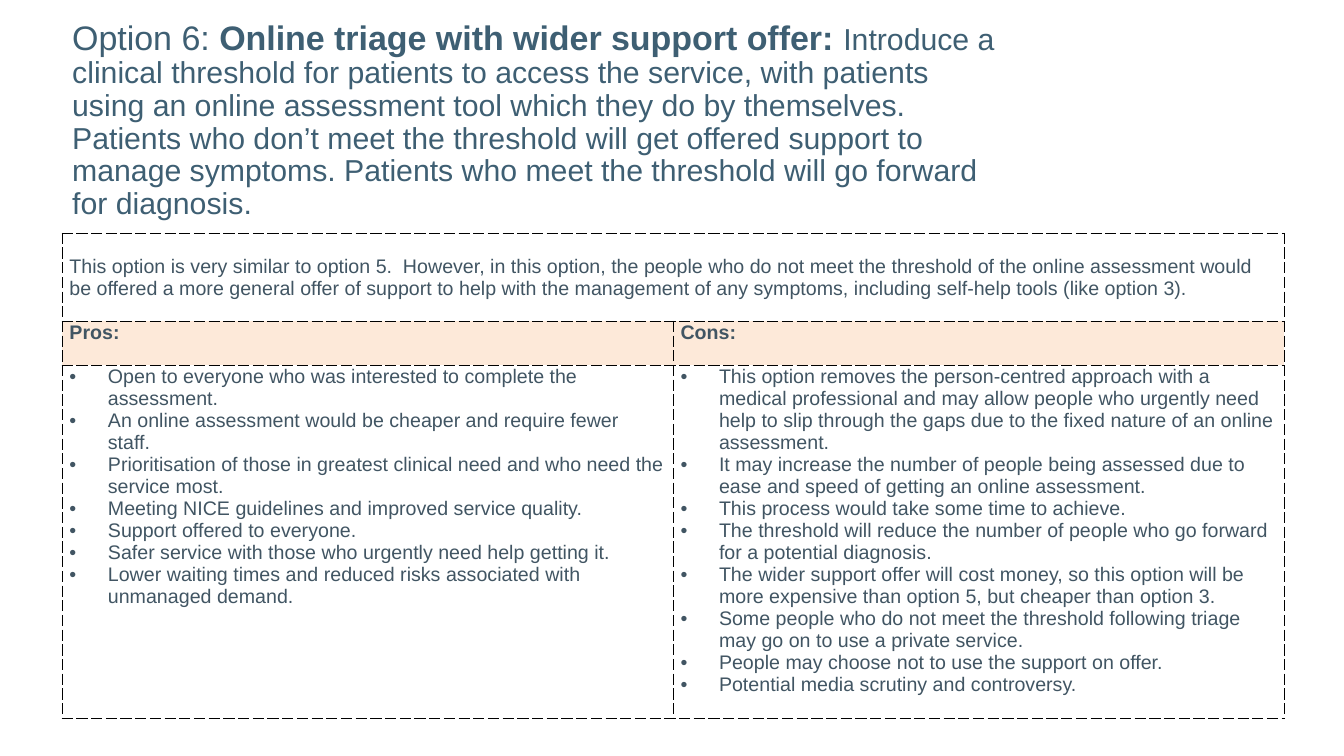
from lxml import etree
from pptx import Presentation
from pptx.dml.color import RGBColor
from pptx.enum import text
from pptx.oxml import ns
from pptx.util import Cm, Pt

TITLE_BLUE = RGBColor(0x3E, 0x5F, 0x73)
BODY_GREY = RGBColor(0x41, 0x55, 0x63)
PEACH = RGBColor(0xFD, 0xE9, 0xD9)
WHITE = RGBColor(0xFF, 0xFF, 0xFF)
BORDER = RGBColor(0, 0, 0)

INTRO = (
    "This option is very similar to option 5.  However, in this option, the people "
    "who do not meet the threshold of the online assessment would be offered a more "
    "general offer of support to help with the management of any symptoms, including "
    "self-help tools (like option 3)."
)
PROS = [
    "Open to everyone who was interested to complete the assessment.",
    "An online assessment would be cheaper and require fewer staff.",
    "Prioritisation of those in greatest clinical need and who need the service most.",
    "Meeting NICE guidelines and improved service quality.",
    "Support offered to everyone.",
    "Safer service with those who urgently need help getting it.",
    "Lower waiting times and reduced risks associated with unmanaged demand.",
]
CONS = [
    "This option removes the person-centred approach with a medical professional and "
    "may allow people who urgently need help to slip through the gaps due to the fixed "
    "nature of an online assessment.",
    "It may increase the number of people being assessed due to ease and speed of "
    "getting an online assessment.",
    "This process would take some time to achieve.",
    "The threshold will reduce the number of people who go forward for a potential "
    "diagnosis.",
    "The wider support offer will cost money, so this option will be more expensive "
    "than option 5, but cheaper than option 3.",
    "Some people who do not meet the threshold following triage may go on to use a "
    "private service.",
    "People may choose not to use the support on offer.",
    "Potential media scrutiny and controversy.",
]


def add_text(p, words, size=14, color=BODY_GREY, bold=False):
    r = p.add_run()
    r.text = words
    r.font.name = "Arial"
    r.font.size = Pt(size)
    r.font.bold = bold
    r.font.color.rgb = color


def add_bullet(p, indent=Cm(0.97)):
    pPr = p._p.get_or_add_pPr()
    pPr.set("marL", str(indent))
    pPr.set("indent", str(-indent))
    etree.SubElement(pPr, ns.qn("a:buFont")).set("typeface", "Arial")
    etree.SubElement(pPr, ns.qn("a:buChar")).set("char", "•")


def format_cell(cell, fill):
    cell.margin_left = cell.margin_right = Cm(0.18)
    cell.margin_top = cell.margin_bottom = 0
    if fill is None:
        cell.fill.background()
    else:
        cell.fill.solid()
        cell.fill.fore_color.rgb = fill
    # Dashed borders come before the fill
    tcPr = cell._tc.get_or_add_tcPr()
    for i, side in enumerate(("lnL", "lnR", "lnT", "lnB")):
        ln = etree.Element(ns.qn(f"a:{side}"), w=str(Pt(1)))
        line_fill = etree.SubElement(ln, ns.qn("a:solidFill"))
        etree.SubElement(line_fill, ns.qn("a:srgbClr")).set("val", str(BORDER))
        etree.SubElement(ln, ns.qn("a:prstDash")).set("val", "dash")
        tcPr.insert(i, ln)


def add_title(slide, left, top, width, height):
    tf = slide.shapes.add_textbox(left, top, width, height).text_frame
    tf.word_wrap = True
    tf.margin_top = tf.margin_bottom = 0
    p = tf.paragraphs[0]
    p.line_spacing = 0.9
    add_text(p, "Option 6: ", size=24.3, color=TITLE_BLUE)
    add_text(p, "Online triage with wider support offer: ", size=24.3,
             color=TITLE_BLUE, bold=True)
    add_text(p, "Introduce a clinical threshold for patients to access the service, "
             "with patients using an online assessment tool which they do by "
             "themselves. Patients who don’t meet the threshold will get offered "
             "support to manage symptoms. Patients who meet the threshold will go "
             "forward for diagnosis.", size=21.6, color=TITLE_BLUE)


def add_options_table(slide, left, top, width, row_heights):
    table = slide.shapes.add_table(3, 2, left, top, width, sum(row_heights)).table
    table.first_row = table.horz_banding = False
    for col in table.columns:
        col.width = width // 2
    for row, height, fill in zip(table.rows, row_heights, (None, PEACH, WHITE)):
        row.height = height
        for cell in row.cells:
            format_cell(cell, fill)

    # Introduction across both columns
    intro = table.cell(0, 0)
    intro.merge(table.cell(0, 1))
    intro.vertical_anchor = text.MSO_ANCHOR.MIDDLE
    add_text(intro.text_frame.paragraphs[0], INTRO)

    # Pros and cons
    for c, (heading, points) in enumerate((("Pros:", PROS), ("Cons:", CONS))):
        add_text(table.cell(1, c).text_frame.paragraphs[0], heading, bold=True)
        tf = table.cell(2, c).text_frame
        for i, point in enumerate(points):
            p = tf.add_paragraph() if i else tf.paragraphs[0]
            add_bullet(p)
            add_text(p, point)


def main():
    prs = Presentation()
    prs.slide_width, prs.slide_height = Cm(33.87), Cm(19.05)
    slide = prs.slides.add_slide(prs.slide_layouts[6])
    add_title(slide, Cm(1.57), Cm(0.53), Cm(23.98), Cm(5))
    add_options_table(slide, Cm(1.57), Cm(5.88), Cm(30.8),
                      (Cm(2.22), Cm(1.11), Cm(8.37)))
    prs.save("out.pptx")


if __name__ == "__main__":
    main()
